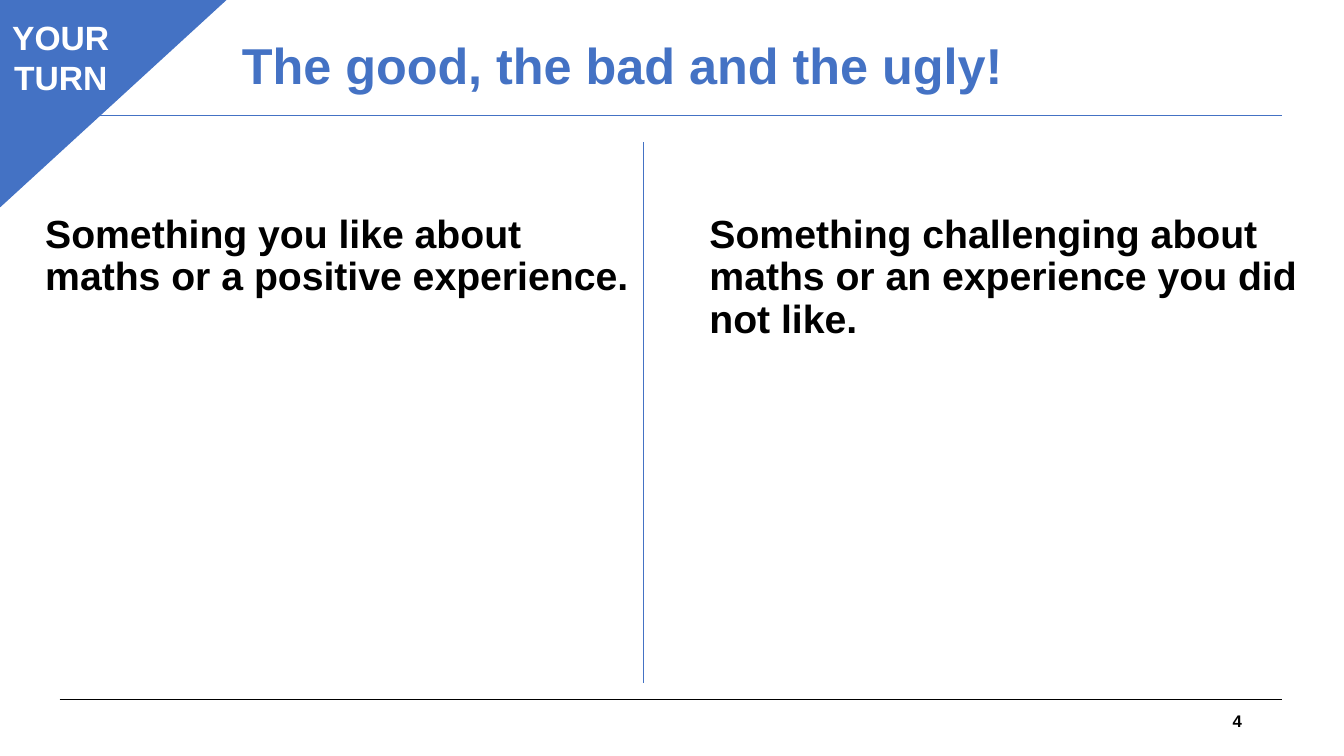
from lxml.etree import SubElement
from pptx import Presentation
from pptx.dml.color import RGBColor
from pptx.enum.shapes import MSO_CONNECTOR as Line, MSO_SHAPE as Shape
from pptx.enum.text import MSO_ANCHOR as Anchor, PP_ALIGN as Align
from pptx.oxml.ns import qn
from pptx.util import Cm, Pt

BLUE = RGBColor(0x44, 0x72, 0xC4)
BLACK = RGBColor(0, 0, 0)
WHITE = RGBColor(255, 255, 255)


def write(para, text, size, color, align=Align.LEFT):
    para.alignment = align
    run = para.add_run()
    run.text = text
    run.font.name = "Arial"
    run.font.size = Pt(size)
    run.font.bold = True
    run.font.color.rgb = color


deck = Presentation()
deck.slide_width = Cm(33.87)
deck.slide_height = Cm(19.05)
slide = deck.slides.add_slide(deck.slide_layouts[5])
shapes = slide.shapes

title = shapes.title
title.left, title.top = Cm(5.84), Cm(0.3)
title.width, title.height = Cm(20.8), Cm(2.82)
frame = title.text_frame
frame.word_wrap = True
frame.vertical_anchor = Anchor.MIDDLE
frame.paragraphs[0].line_spacing = 0.9
write(frame.paragraphs[0], "The good, the bad and the ugly!", 36, BLUE)

rules = [
    (1.5, 17.63, 32.31, 17.63, BLACK, 0.75),
    (1.5, 2.9, 32.31, 2.9, BLUE, 0.75),
    (16.21, 3.58, 16.21, 17.22, BLUE, 0.5),
]
for x1, y1, x2, y2, color, width in rules:
    rule = shapes.add_connector(Line.STRAIGHT, Cm(x1), Cm(y1), Cm(x2), Cm(y2))
    rule.line.color.rgb = color
    rule.line.width = Pt(width)
    SubElement(rule._element.spPr, qn("a:effectLst"))

corner = shapes.add_shape(Shape.ISOSCELES_TRIANGLE, Cm(-0.08), Cm(-0.05), Cm(5.82), Cm(5.33))
corner.adjustments[0] = 0
corner._element.spPr.find(qn("a:xfrm")).set("flipV", "1")
label = shapes.add_shape(Shape.RECTANGLE, Cm(0.03), Cm(0.3), Cm(3), Cm(2.11))
for part, width in ((corner, 1), (label, 0.75)):
    part.shadow.inherit = False
    part.fill.solid()
    part.fill.fore_color.rgb = BLUE
    part.line.color.rgb = BLUE
    part.line.width = Pt(width)

frame = label.text_frame
frame.word_wrap = True
frame.margin_left = frame.margin_right = 0
frame.vertical_anchor = Anchor.TOP
write(frame.paragraphs[0], "YOUR", 24, WHITE, Align.CENTER)
write(frame.add_paragraph(), "TURN", 24, WHITE, Align.CENTER)

prompts = [
    (0.89, "Something you like about maths or a positive experience."),
    (17.63, "Something challenging about maths or an experience you did not like."),
]
for left, text in prompts:
    box = shapes.add_textbox(Cm(left), Cm(5.28), Cm(15.34), Cm(11.2))
    box.text_frame.word_wrap = True
    para = box.text_frame.paragraphs[0]
    para.line_spacing = 0.9
    para.space_before = Pt(10)
    write(para, text, 28, BLACK)

number = shapes.add_textbox(Cm(23.93), Cm(17.65), Cm(7.62), Cm(1.02))
frame = number.text_frame
frame.word_wrap = True
frame.vertical_anchor = Anchor.MIDDLE
write(frame.paragraphs[0], "4", 12, BLACK, Align.RIGHT)

deck.save("out.pptx")
